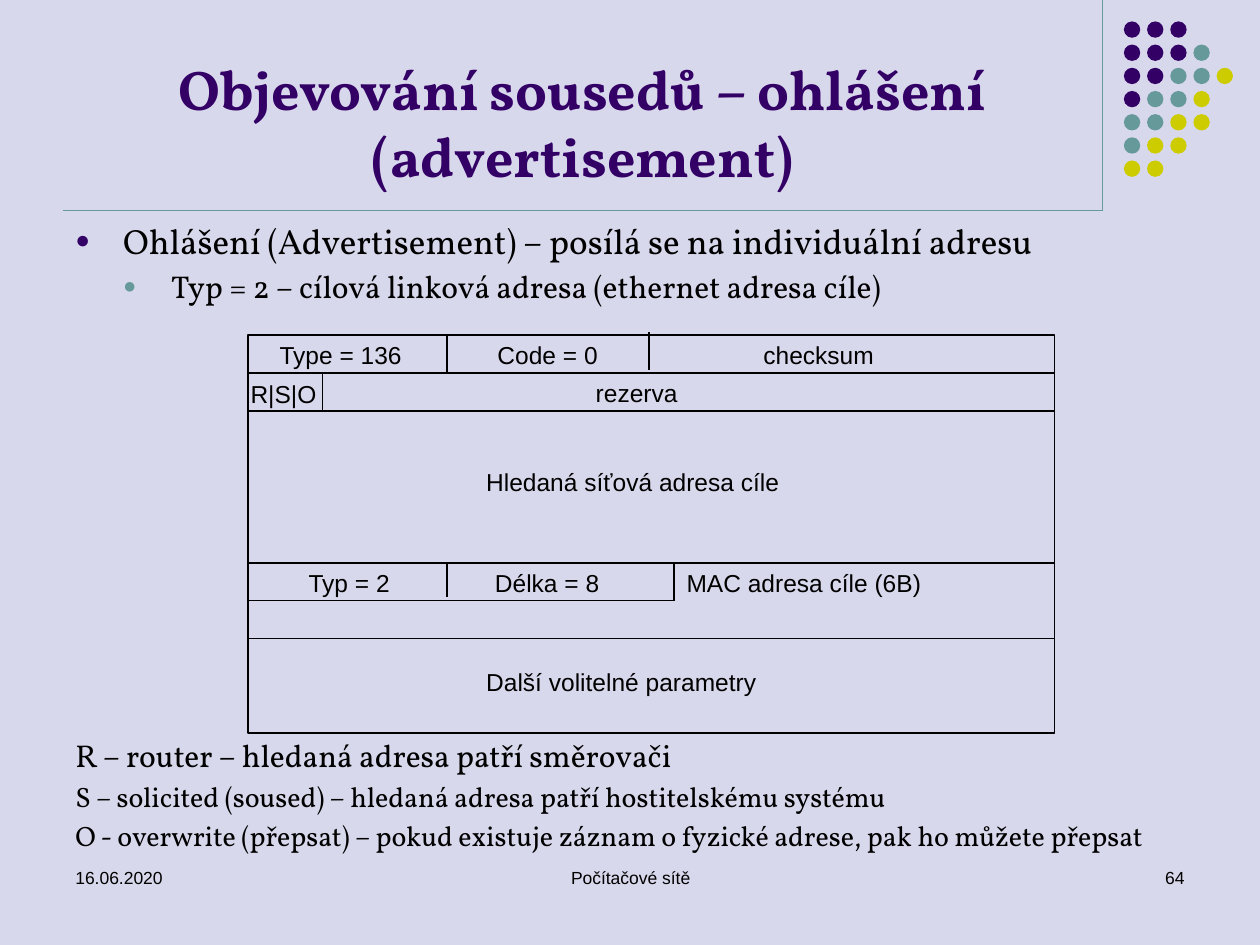
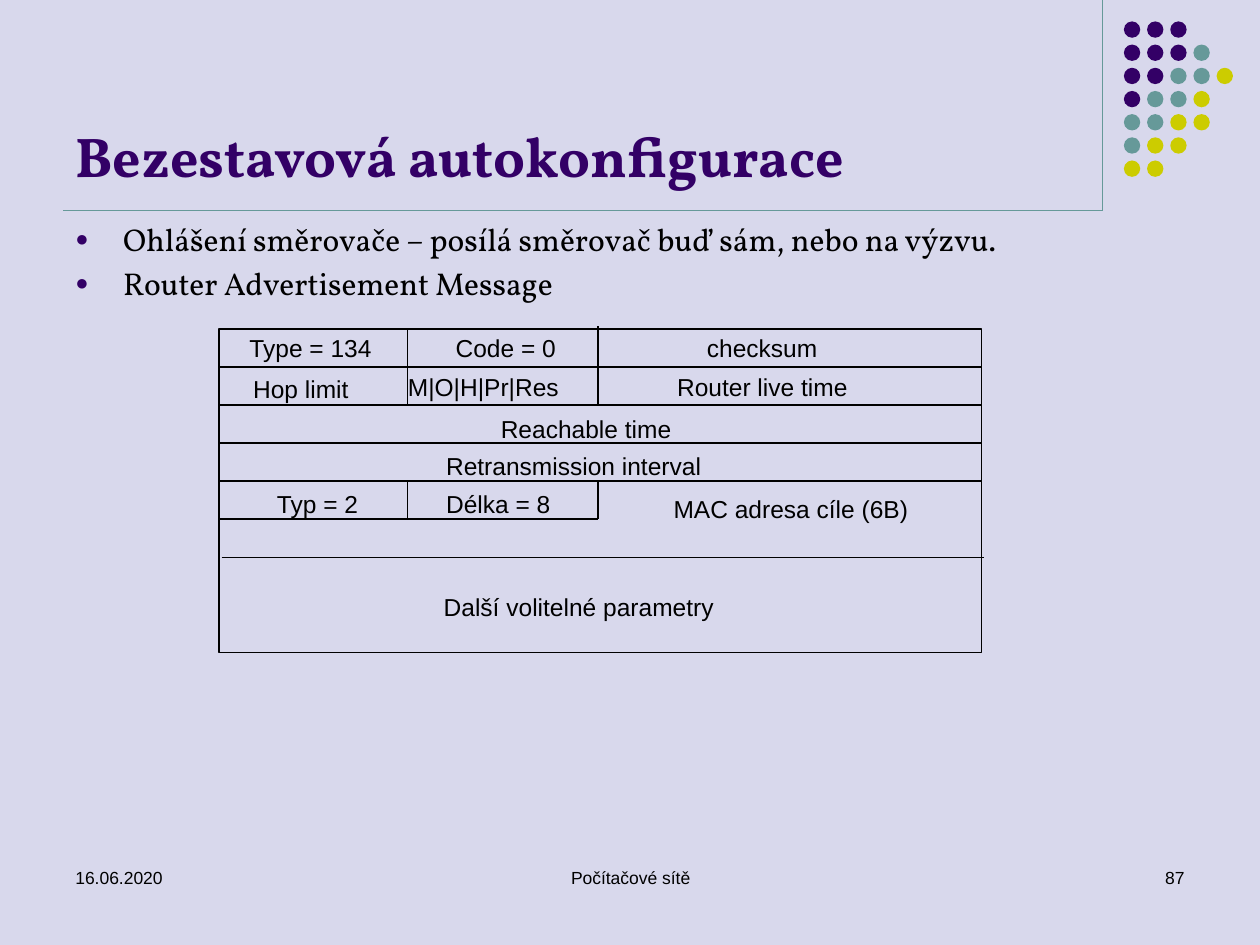
from lxml.etree import SubElement
from pptx import Presentation
from pptx.dml.color import RGBColor
from pptx.enum.shapes import MSO_CONNECTOR, MSO_SHAPE
from pptx.enum.text import MSO_ANCHOR, PP_ALIGN
from pptx.oxml.ns import qn
from pptx.util import Inches, Pt

HUES = {"back": "D8D8EC", "plum": "330066", "teal": "669999",
        "lime": "CCCC00", "ink": "000000"}
SERIF, SANS = "Vollkorn", "Arial"
WIDE, HIGH = 10, 7.5
EDGE, RULE = 8.75, 1.67          # right edge and base line of the title band
INDENT = 0.38
DOTS = ["PPP", "PPPT", "PPTTL", "PTTL", "TTLL", "TLL", "LL"]
DOT_HUES = {"P": "plum", "T": "teal", "L": "lime"}
BITS = 32
BYTE, HALF = 7.9, 15.9           # column marks in a packet


def hue(name):
    return RGBColor.from_string(HUES[name])


def add_line(slide, x1, y1, x2, y2, color="ink", width=1):
    line = slide.shapes.add_connector(
        MSO_CONNECTOR.STRAIGHT, *(Inches(v) for v in (x1, y1, x2, y2)))
    line.line.color.rgb = hue(color)
    line.line.width = Pt(width)
    SubElement(line._element.spPr, qn("a:effectLst"))


def add_shape(slide, kind, x, y, w, h, fill=None, line=None):
    shape = slide.shapes.add_shape(kind, *(Inches(v) for v in (x, y, w, h)))
    shape.shadow.inherit = False
    if fill:
        shape.fill.solid()
        shape.fill.fore_color.rgb = hue(fill)
    else:
        shape.fill.background()
    if line:
        shape.line.color.rgb = hue(line)
        shape.line.width = Pt(1)
    else:
        shape.line.fill.background()


def add_box(slide, x, y, w, h, wrap=True):
    box = slide.shapes.add_textbox(*(Inches(v) for v in (x, y, w, h)))
    box.text_frame.word_wrap = wrap
    return box.text_frame


def style(para, text, size, face=SANS, color="ink", bold=False, align=None):
    para.text = text
    para.alignment = align
    font = para.font
    font.name, font.size, font.bold = face, Pt(size), bold
    font.color.rgb = hue(color)


def add_bullet(para, level):
    props = para._p.get_or_add_pPr()
    props.set("marL", str(Inches(INDENT * level)))
    props.set("indent", str(-Inches(INDENT)))
    color = SubElement(props, qn("a:buClr"))
    SubElement(color, qn("a:srgbClr"), val=HUES["plum" if level == 1 else "teal"])
    SubElement(props, qn("a:buSzPct"), val="70000")
    SubElement(props, qn("a:buFont"), typeface=SANS)
    SubElement(props, qn("a:buChar"), char="●")


def add_list(slide, top, height, items):
    """Items are (text, size, bullet level); level 0 has no bullet."""
    frame = add_box(slide, 0.5, top, 9, height)
    for i, (text, size, level) in enumerate(items):
        para = frame.add_paragraph() if i else frame.paragraphs[0]
        style(para, text, size, SERIF)
        para.space_before = Pt(size * 0.2)
        if level:
            add_bullet(para, level)


def add_dots(slide):
    for row, marks in enumerate(DOTS):
        for col, mark in enumerate(marks):
            add_shape(slide, MSO_SHAPE.OVAL, 8.92 + col * 0.18 + col * 0.004,
                      0.17 + row * 0.18 + row * 0.004, 0.13, 0.13, DOT_HUES[mark])


def add_page(deck, title, number, align=PP_ALIGN.LEFT):
    slide = deck.slides.add_slide(deck.slide_layouts[6])
    slide.background.fill.solid()
    slide.background.fill.fore_color.rgb = hue("back")
    add_line(slide, EDGE, 0, EDGE, RULE, "teal", 0.75)
    add_line(slide, 0.5, RULE, EDGE, RULE, "teal", 0.75)
    add_dots(slide)
    frame = add_box(slide, 0.5, 0.13, 8.25, 1.42)
    frame.vertical_anchor = MSO_ANCHOR.BOTTOM
    style(frame.paragraphs[0], title, 32, SERIF, "plum", True, align)
    feet = [("16.06.2020", 0.5, 2.33, PP_ALIGN.LEFT),
            ("Počítačové sítě", 3.42, 3.17, PP_ALIGN.CENTER),
            (number, 7.17, 2.33, PP_ALIGN.RIGHT)]
    for text, left, width, side in feet:
        foot = add_box(slide, left, 6.83, width, 0.5)
        style(foot.paragraphs[0], text, 10, align=side)
    return slide


def add_packet(slide, frame, rows, lines, labels):
    """Draw a packet; lines and labels are in bit columns and rows."""
    left, top, width, height = frame
    col, row = width / BITS, height / rows
    add_shape(slide, MSO_SHAPE.RECTANGLE, *frame, line="ink")
    for x1, y1, x2, y2 in lines:
        add_line(slide, left + x1 * col, top + y1 * row,
                 left + x2 * col, top + y2 * row)
    for text, x, y, w, h in labels:
        box = add_box(slide, left + x * col, top + y * row, w * col, h * row, False)
        para = box.paragraphs[0]
        style(para, text, 14)
        para.line_spacing = 1.07
        para.space_after = Pt(8)


def across(*rows):
    return [(0, row, BITS, row) for row in rows]


def head(kind):
    """Labels of the first row, alike in every packet."""
    return [(f"Type = {kind}", 0.75, -0.1, 7.05, 1.2),
            ("Code = 0", 9.4, -0.1, 6, 1.2),
            ("checksum", 19.95, -0.1, 6.6, 1.2)]


def neighbor_page(deck):
    slide = add_page(deck, "Objevování sousedů – ohlášení (advertisement)",
                     "64", PP_ALIGN.CENTER)
    add_list(slide, 1.69, 1, [
        ("Ohlášení (Advertisement) – posílá se na individuální adresu", 20, 1),
        ("Typ = 2 – cílová linková adresa (ethernet adresa cíle)", 18, 2)])
    lines = across(1, 2, 6, 8) + [
        (BYTE, 0, BYTE, 1), (HALF, -0.07, HALF, 0.93), (2.95, 1, 2.95, 2),
        (BYTE, 6, BYTE, 6.9), (16.9, 6, 16.9, 7), (0, 7, 16.9, 7)]
    labels = head(136) + [
        ("R|S|O", -0.4, 0.93, 4.8, 1.16),
        ("rezerva", 13.3, 0.9, 5.35, 1.2),
        ("Hledaná síťová adresa cíle", 8.95, 3.26, 14.55, 1.03),
        ("Typ = 2", 1.9, 5.91, 5.25, 1.5),
        ("Délka = 8", 9.3, 5.91, 6.2, 1.5),
        ("MAC adresa cíle (6B)", 16.9, 5.91, 11.9, 1.03),
        ("Další volitelné parametry", 8.95, 8.54, 14.1, 1.26)]
    add_packet(slide, (1.97, 2.66, 6.4, 3.16), 10.5, lines, labels)
    add_list(slide, 5.79, 1, [
        ("R – router – hledaná adresa patří směrovači", 18, 0),
        ("S – solicited (soused) – hledaná adresa patří hostitelskému systému", 16, 0),
        ("O - overwrite (přepsat) – pokud existuje záznam o fyzické adrese, "
         "pak ho můžete přepsat", 16, 0)])


def router_page(deck):
    slide = add_page(deck, "Bezestavová autokonfigurace", "87")
    add_list(slide, 1.7, 0.87, [
        ("Ohlášení směrovače – posílá směrovač buď sám, nebo na výzvu.", 18, 1),
        ("Router Advertisement Message", 18, 1)])
    lines = across(1, 2, 3, 4) + [
        (BYTE, 0, BYTE, 2), (HALF, -0.07, HALF, 2),
        (BYTE, 4, BYTE, 5), (HALF, 4, HALF, 5),
        (0, 5, HALF, 5), (0.1, 6, BITS + 0.1, 6)]
    labels = head(134) + [
        ("Hop limit", 0.9, 0.96, 6.2, 1.2),
        ("M|O|H|Pr|Res", 7.4, 0.93, 9.3, 1.2),
        ("Router live time", 18.7, 0.93, 9.6, 1.2),
        ("Reachable time", 11.3, 2.02, 9.4, 1.06),
        ("Retransmission interval", 9, 3, 13.3, 1.3),
        ("Typ = 2", 1.9, 4, 5.25, 1.5),
        ("Délka = 8", 9, 4, 6.25, 1.5),
        ("MAC adresa cíle (6B)", 18.55, 4.13, 11.95, 1.4),
        ("Další volitelné parametry", 8.9, 6.68, 14.2, 1.3)]
    add_packet(slide, (1.74, 2.61, 6.05, 2.57), 8.5, lines, labels)


def main():
    deck = Presentation()
    deck.slide_width, deck.slide_height = Inches(WIDE), Inches(HIGH)
    neighbor_page(deck)
    router_page(deck)
    deck.save("out.pptx")


if __name__ == "__main__":
    main()
